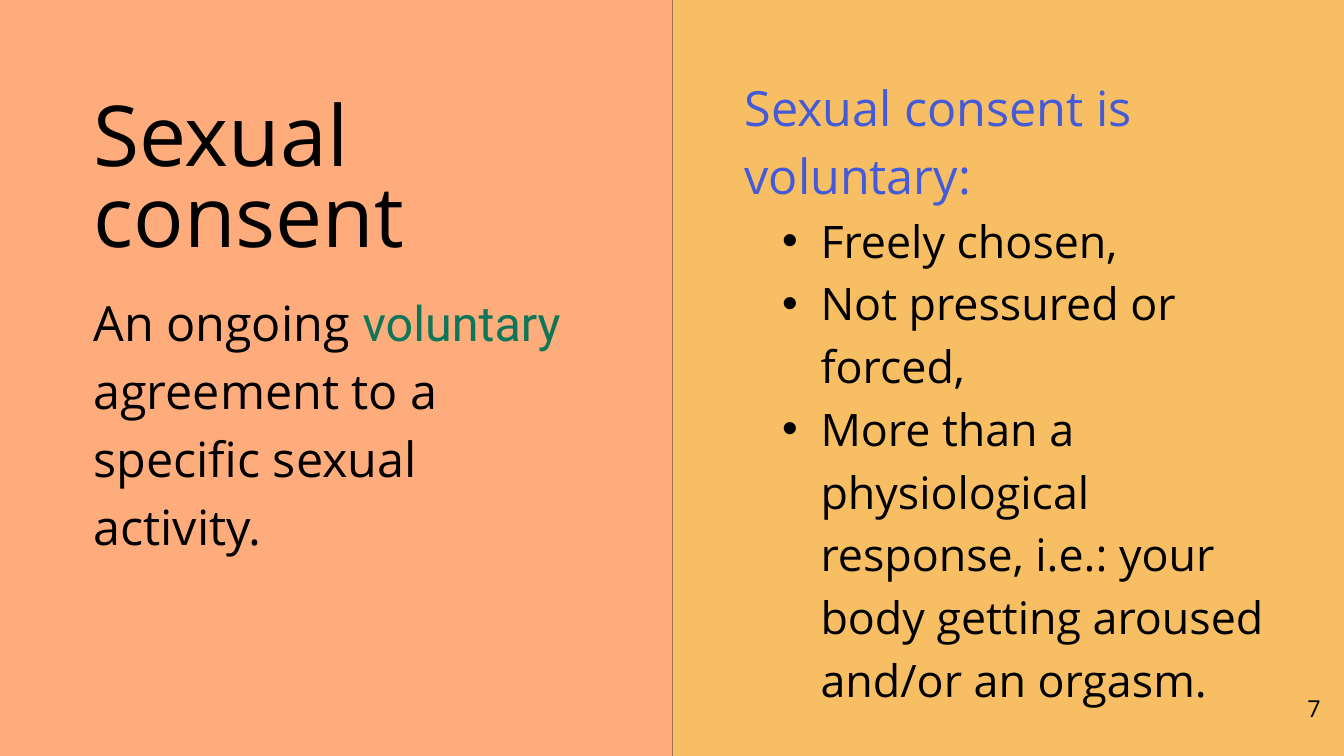
from lxml import etree
from pptx import Presentation
from pptx.dml.color import RGBColor
from pptx.enum.shapes import MSO_CONNECTOR, MSO_SHAPE
from pptx.enum.text import MSO_ANCHOR, MSO_AUTO_SIZE, PP_ALIGN
from pptx.oxml.ns import qn
from pptx.util import Inches, Pt

BLACK = RGBColor(0x00, 0x00, 0x00)
AMBER = RGBColor(0xF8, 0xBE, 0x64)
PEACH = RGBColor(0xFE, 0xAC, 0x7C)
GREEN = RGBColor(0x0E, 0x76, 0x58)
BLUE = RGBColor(0x43, 0x5B, 0xD8)
MAIN_FONT = "Open Sans"
ACCENT_FONT = "Roboto"

PANEL_EDGE = 10.01
BULLETS = (
    "Freely chosen,",
    "Not pressured or forced,",
    "More than a physiological response, i.e.: your body getting aroused and/or an orgasm.",
)


def place(shape, left, top, width, height):
    shape.left, shape.top = Inches(left), Inches(top)
    shape.width, shape.height = Inches(width), Inches(height)


def prepare_placeholder(shape, *box):
    """Position a placeholder and return its frame, without margins."""
    place(shape, *box)
    frame = shape.text_frame
    frame.margin_left = frame.margin_top = 0
    frame.margin_right = frame.margin_bottom = 0
    frame.vertical_anchor = MSO_ANCHOR.TOP
    frame.word_wrap = True
    frame.auto_size = MSO_AUTO_SIZE.SHAPE_TO_FIT_TEXT
    return frame


def add_run(paragraph, text, size, color=BLACK, font=MAIN_FONT):
    run = paragraph.add_run()
    run.text = text
    run.font.size = Pt(size)
    run.font.name = font
    run.font.color.rgb = color


def add_paragraph(frame, text, size, spacing, color=BLACK, bullet=False):
    """Write into the empty first paragraph, or into a new one."""
    first = frame.paragraphs[0]
    paragraph = frame.add_paragraph() if first.runs else first
    paragraph.alignment = PP_ALIGN.LEFT
    paragraph.line_spacing = Pt(spacing)
    paragraph.space_before = paragraph.space_after = Pt(0)
    paragraph.level = 1 if bullet else 0
    properties = paragraph._p.get_or_add_pPr()
    properties.set("marL", str(Inches(1.13) if bullet else 0))
    properties.set("indent", str(Inches(-0.57) if bullet else 0))
    if bullet:
        etree.SubElement(properties, qn("a:buFont")).set("typeface", "Arial")
        etree.SubElement(properties, qn("a:buChar")).set("char", "•")
    else:
        etree.SubElement(properties, qn("a:buNone"))
    add_run(paragraph, text, size, color)
    return paragraph


def add_background(slide):
    """Amber slide, with the divider and the peach panel behind the text."""
    slide.background.fill.solid()
    slide.background.fill.fore_color.rgb = AMBER

    divider = slide.shapes.add_connector(
        MSO_CONNECTOR.STRAIGHT,
        Inches(PANEL_EDGE), Inches(-3.16), Inches(PANEL_EDGE), Inches(14.59))
    divider.line.color.rgb = BLACK
    divider.line.width = Pt(0.75)
    etree.SubElement(divider._element.spPr, qn("a:effectLst"))

    panel = slide.shapes.add_shape(
        MSO_SHAPE.RECTANGLE,
        Inches(-0.95), Inches(-0.45), Inches(PANEL_EDGE + 0.95), Inches(12.16))
    panel.shadow.inherit = False
    panel.fill.solid()
    panel.fill.fore_color.rgb = PEACH
    panel.line.fill.background()

    # Send both behind the placeholders
    tree = slide.shapes._spTree
    for position, shape in enumerate((divider, panel), start=2):
        tree.insert(position, shape._element)


def add_page_number(slide, number):
    box = slide.shapes.add_textbox(
        Inches(16.83), Inches(10.21), Inches(2.92), Inches(0.65))
    frame = box.text_frame
    frame.word_wrap = True
    frame.vertical_anchor = MSO_ANCHOR.MIDDLE
    paragraph = frame.paragraphs[0]
    paragraph.alignment = PP_ALIGN.RIGHT
    add_run(paragraph, number, 25)


def main():
    presentation = Presentation()
    presentation.slide_width = Inches(20)
    presentation.slide_height = Inches(11.25)
    two_content = presentation.slide_layouts[3]
    slide = presentation.slides.add_slide(two_content)
    add_background(slide)

    # Left: title and definition
    title = prepare_placeholder(slide.shapes.title, 1.39, 1.51, 5.16, 2.49)
    for line in ("Sexual", "consent"):
        add_paragraph(title, line, 90, 87.3)

    definition = prepare_placeholder(slide.placeholders[1], 1.39, 4.22, 7.18, 4)
    sentence = add_paragraph(definition, "An ongoing ", 52, 72.8)
    add_run(sentence, "voluntary", 52, GREEN, ACCENT_FONT)
    add_run(sentence, " agreement to a specific sexual activity.", 52)

    # Right: heading and bullets
    details = prepare_placeholder(slide.placeholders[2], 11.08, 1.02, 8.23, 9.5)
    for line in ("Sexual consent is", "voluntary:"):
        add_paragraph(details, line, 52, 72.8, BLUE)
    for line in BULLETS:
        add_paragraph(details, line, 48, 67.2, bullet=True)

    add_page_number(slide, "7")
    presentation.save("out.pptx")


if __name__ == "__main__":
    main()
